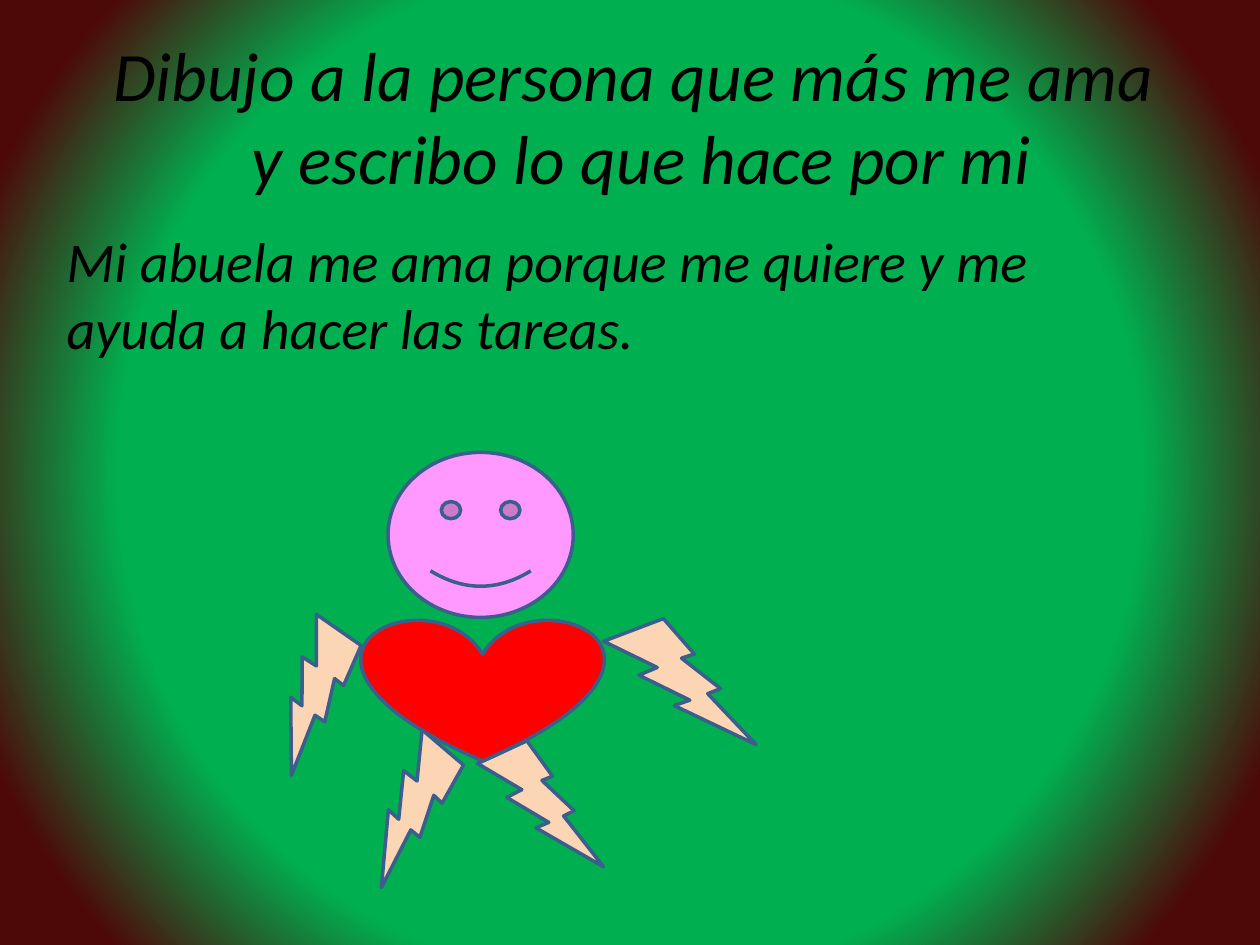
from pptx import Presentation
from pptx.dml.color import RGBColor
from pptx.enum.shapes import MSO_SHAPE as Kind
from pptx.enum.text import MSO_ANCHOR as Anchor, PP_ALIGN as Align
from pptx.oxml import parse_xml
from pptx.oxml.ns import nsdecls
from pptx.util import Inches, Pt

LINE = "3A5F8C"
SKIN = "FCD5B5"


def color(code):
    """Turn a hex string into a colour."""
    return RGBColor.from_string(code)


def add_glow(slide, inner, outer):
    """Fill the background with a round gradient; each stop is (percent, hex)."""
    stops = "".join(
        f'<a:gs pos="{pos * 1000}"><a:srgbClr val="{code}"/></a:gs>'
        for pos, code in (inner, outer)
    )
    back = parse_xml(
        f'<p:bg {nsdecls("p", "a")}><p:bgPr><a:gradFill rotWithShape="1">'
        f'<a:gsLst>{stops}</a:gsLst><a:path path="circle">'
        '<a:fillToRect l="50000" t="50000" r="50000" b="50000"/></a:path>'
        "</a:gradFill><a:effectLst/></p:bgPr></p:bg>"
    )
    slide.element.cSld.insert(0, back)


def add_text(slide, text, box, size, align=Align.LEFT, anchor=Anchor.TOP, before=0):
    """Add a wrapped text box in black italics."""
    frame = slide.shapes.add_textbox(*map(Inches, box)).text_frame
    frame.word_wrap = True
    frame.vertical_anchor = anchor
    para = frame.paragraphs[0]
    para.text = text
    para.alignment = align
    para.space_before = Pt(before)
    for run in para.runs:
        font = run.font
        font.name, font.size, font.italic = "Calibri", Pt(size), True
        font.color.rgb = color("000000")


def add_part(slide, kind, box, fill, turn=0):
    """Add one outlined body part."""
    part = slide.shapes.add_shape(kind, *map(Inches, box))
    part.shadow.inherit = False
    part.fill.solid()
    part.fill.fore_color.rgb = color(fill)
    part.line.color.rgb = color(LINE)
    part.line.width = Pt(2)
    part.rotation = turn


def add_granny(slide):
    """Draw the grandmother from head to legs."""
    bolt = Kind.LIGHTNING_BOLT
    add_part(slide, Kind.SMILEY_FACE, (3.08, 3.59, 1.47, 1.31), "FF99FF")
    add_part(slide, bolt, (4.79, 4.91, 1.21, 1), SKIN)
    add_part(slide, bolt, (3.79, 5.88, 1, 1), SKIN)
    add_part(slide, Kind.HEART, (2.87, 4.91, 1.92, 1.13), "FF0000")
    add_part(slide, bolt, (1.99, 4.97, 1, 1), SKIN, turn=59.5)
    add_part(slide, bolt, (2.77, 5.88, 1, 1), SKIN, turn=65.1)


def main():
    """Build and save the slide."""
    deck = Presentation()
    deck.slide_width, deck.slide_height = Inches(10), Inches(7.5)
    slide = deck.slides.add_slide(deck.slide_layouts[6])
    add_glow(slide, (65, "00B050"), (89, "4D0808"))
    add_text(
        slide,
        "Dibujo a la persona que más me ama \vy escribo lo que hace por mi",
        (0.59, 0.29, 9, 1.25),
        39.6,
        align=Align.CENTER,
        anchor=Anchor.MIDDLE,
    )
    add_text(
        slide,
        "Mi abuela me ama porque me quiere y me ayuda a hacer las tareas.",
        (0.43, 1.75, 9, 5.75),
        32,
        before=6.4,
    )
    add_granny(slide)
    deck.save("out.pptx")


if __name__ == "__main__":
    main()
